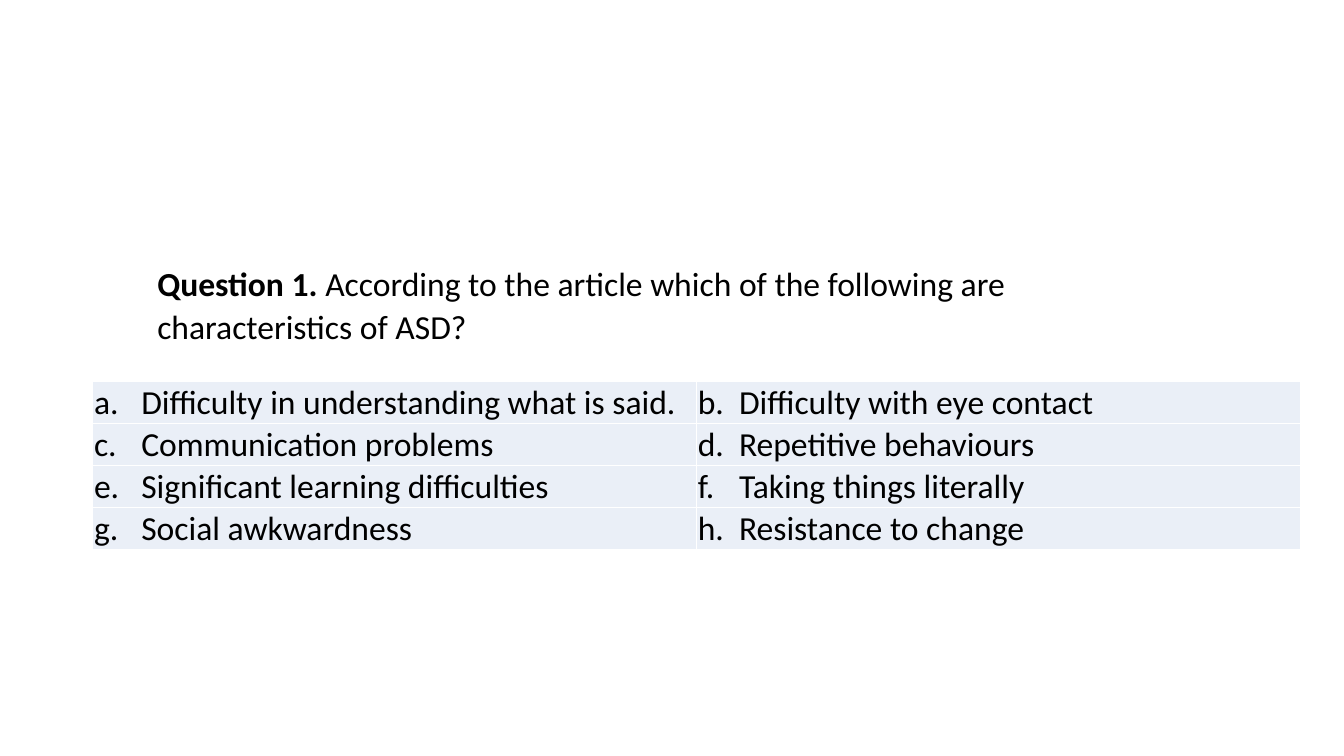
from dataclasses import dataclass

from lxml import etree
from pptx import Presentation
from pptx.dml.color import RGBColor
from pptx.enum import text
from pptx.oxml import ns
from pptx.util import Cm, Pt


@dataclass(frozen=True)
class Theme:
    font: str = "Calibri"
    size: int = 24
    ink: str = "000000"
    band: str = "EAEFF7"
    rule: str = "FFFFFF"


@dataclass(frozen=True)
class Option:
    mark: str
    label: str


THEME = Theme()
COLS = 2
INDENTS = (Cm(1.19), Cm(1.04))
OPTIONS = (
    Option("a.", "Difficulty in understanding what is said."),
    Option("b.", "Difficulty with eye contact"),
    Option("c.", "Communication problems"),
    Option("d.", "Repetitive behaviours"),
    Option("e.", "Significant learning difficulties"),
    Option("f.", "Taking things literally"),
    Option("g.", "Social awkwardness"),
    Option("h.", "Resistance to change"),
)


def add_run(para, words: str, bold: bool = False) -> None:
    run = para.add_run()
    run.text = words
    font = run.font
    font.name, font.size, font.bold = THEME.font, Pt(THEME.size), bold
    font.color.rgb = RGBColor.from_string(THEME.ink)


def add_title(slide) -> None:
    title = slide.shapes.title
    title.left, title.top = Cm(3.71), Cm(6.43)
    title.width, title.height = Cm(25.76), Cm(2.41)
    frame = title.text_frame
    frame.word_wrap = True
    frame.auto_size = text.MSO_AUTO_SIZE.NONE
    frame.vertical_anchor = text.MSO_ANCHOR.TOP
    para = frame.paragraphs[0]
    para.alignment = text.PP_ALIGN.LEFT
    para.line_spacing = 1.07
    para.space_before, para.space_after = Pt(0), Pt(6)
    add_run(para, "Question 1.", bold=True)
    add_run(para, " According to the article which of the following "
                  "are characteristics of ASD?")


def add_rules(cell) -> None:
    """Draw a thin line on each side of the cell."""
    props = cell._tc.get_or_add_tcPr()
    for side in ("lnL", "lnR", "lnT", "lnB"):
        line = etree.SubElement(props, ns.qn(f"a:{side}"), w=str(Pt(1)))
        fill = etree.SubElement(line, ns.qn("a:solidFill"))
        etree.SubElement(fill, ns.qn("a:srgbClr"), val=THEME.rule)


def fill_cell(cell, option: Option, indent: int) -> None:
    cell.margin_left = cell.margin_top = cell.margin_right = Cm(0.03)
    cell.margin_bottom = 0
    cell.vertical_anchor = text.MSO_ANCHOR.MIDDLE
    add_rules(cell)
    cell.fill.solid()
    cell.fill.fore_color.rgb = RGBColor.from_string(THEME.band)
    para = cell.text_frame.paragraphs[0]
    props = para._p.get_or_add_pPr()
    props.set("marL", str(indent))
    props.set("indent", str(-indent))
    add_run(para, f"{option.mark}\t{option.label}")


def add_options(slide) -> None:
    rows = len(OPTIONS) // COLS
    table = slide.shapes.add_table(
        rows, COLS, Cm(2.34), Cm(9.6), Cm(30.43), Cm(1.04) * rows).table
    table.first_row = table.horz_banding = False
    for i, option in enumerate(OPTIONS):
        row, col = divmod(i, COLS)
        fill_cell(table.cell(row, col), option, INDENTS[col])


def main() -> None:
    deck = Presentation()
    deck.slide_width, deck.slide_height = Cm(33.87), Cm(19.05)
    slide = deck.slides.add_slide(deck.slide_layouts.get_by_name("Title Only"))
    add_title(slide)
    add_options(slide)
    deck.save("out.pptx")


if __name__ == "__main__":
    main()
